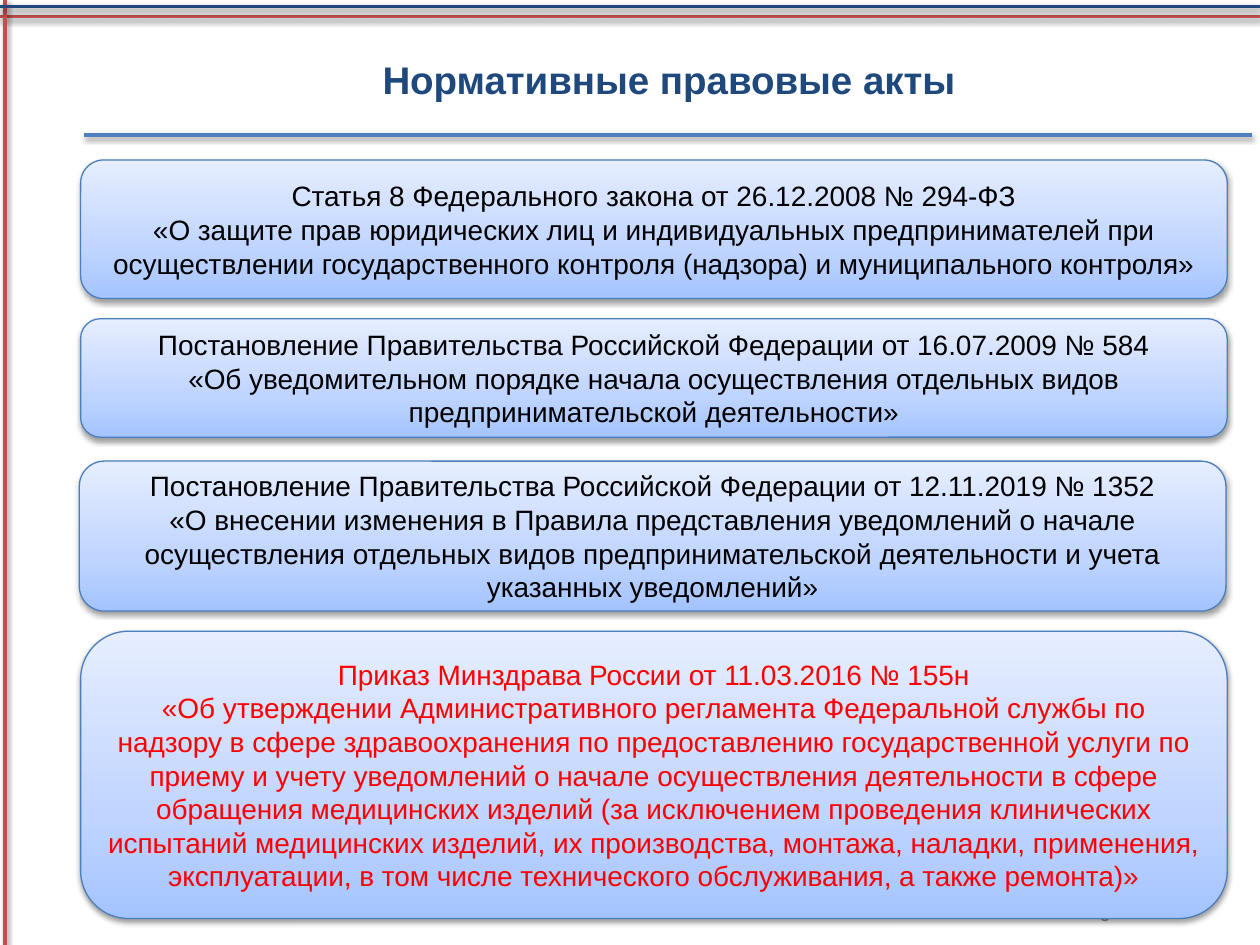
from copy import deepcopy
from dataclasses import dataclass

from lxml.etree import SubElement
from pptx import Presentation
from pptx.dml.color import RGBColor
from pptx.enum.shapes import MSO_CONNECTOR, MSO_SHAPE
from pptx.enum.text import MSO_ANCHOR, MSO_AUTO_SIZE, PP_ALIGN
from pptx.oxml.ns import qn
from pptx.util import Inches, Pt


@dataclass(frozen=True)
class Theme:
    face: str = "Arial"
    head: int = 22
    text: int = 16
    small: int = 12
    navy: str = "1F497D"
    red: str = "C0504D"
    blue: str = "4F81BD"
    edge: str = "4B7EBC"
    ink: str = "000000"
    alert: str = "FF0000"
    grey: str = "8C8C8C"
    fade: tuple = ((0, "A4C4FF"), (0.35, "BFD4FF"), (1, "E6EEFF"))


THEME = Theme()

ACTS = [
    (0.64, 1.27, 1.1, THEME.ink,
     "Статья 8 Федерального закона от 26.12.2008 № 294-ФЗ",
     "«О защите прав юридических лиц и индивидуальных предпринимателей при "
     "осуществлении государственного контроля (надзора) и муниципального контроля»"),
    (0.64, 2.53, 0.94, THEME.ink,
     "Постановление Правительства Российской Федерации от 16.07.2009 № 584",
     "«Об уведомительном порядке начала осуществления отдельных видов "
     "предпринимательской деятельности»"),
    (0.63, 3.66, 1.19, THEME.ink,
     "Постановление Правительства Российской Федерации от 12.11.2019 № 1352",
     "«О внесении изменения в Правила представления уведомлений о начале "
     "осуществления отдельных видов предпринимательской деятельности и учета "
     "указанных уведомлений»"),
    (0.64, 5.01, 2.28, THEME.alert,
     "Приказ Минздрава России от 11.03.2016 № 155н",
     "«Об утверждении Административного регламента Федеральной службы по надзору "
     "в сфере здравоохранения по предоставлению государственной услуги по приему "
     "и учету уведомлений о начале осуществления деятельности в сфере обращения "
     "медицинских изделий (за исключением проведения клинических испытаний "
     "медицинских изделий, их производства, монтажа, наладки, применения, "
     "эксплуатации, в том числе технического обслуживания, а также ремонта)»"),
]


def apply(item, values):
    for name, value in values.items():
        setattr(item, name, value)


def place(shape, left, top, width, height):
    apply(shape, {"left": Inches(left), "top": Inches(top),
                  "width": Inches(width), "height": Inches(height)})


def write(shape, lines, size, color, face=THEME.face, bold=False,
          align=PP_ALIGN.CENTER):
    frame = shape.text_frame
    apply(frame, {"word_wrap": True, "auto_size": MSO_AUTO_SIZE.NONE,
                  "vertical_anchor": MSO_ANCHOR.MIDDLE})
    frame.text = "\n".join(lines)
    for para in frame.paragraphs:
        para.alignment = align
        for run in para.runs:
            apply(run.font, {"name": face, "size": Pt(size), "bold": bold})
            run.font.color.rgb = RGBColor.from_string(color)


def shade(shape):
    effect = SubElement(shape._element.spPr, qn("a:effectLst"))
    cast = SubElement(effect, qn("a:outerShdw"), blurRad="40000", dist="20000",
                      dir="5400000", rotWithShape="0")
    tint = SubElement(cast, qn("a:srgbClr"), val=THEME.ink)
    SubElement(tint, qn("a:alpha"), val="38000")


def stroke(shape, color, width):
    shape.line.color.rgb = RGBColor.from_string(color)
    shape.line.width = Pt(width)


def add_rule(slide, start, end, color):
    ends = [Inches(value) for value in (*start, *end)]
    rule = slide.shapes.add_connector(MSO_CONNECTOR.STRAIGHT, *ends)
    stroke(rule, color, 2)
    shade(rule)


def fade(shape):
    fill = shape.fill
    fill.gradient()
    fill.gradient_angle = 90
    stops = shape._element.spPr.find(".//" + qn("a:gsLst"))
    stops.insert(1, deepcopy(stops[0]))
    for stop, (place_at, color) in zip(fill.gradient_stops, THEME.fade):
        stop.position = place_at
        stop.color.rgb = RGBColor.from_string(color)


def add_act(slide, left, top, height, color, *lines):
    card = slide.shapes.add_shape(
        MSO_SHAPE.ROUNDED_RECTANGLE, Inches(left), Inches(top),
        Inches(9.1), Inches(height))
    fade(card)
    stroke(card, THEME.edge, 0.75)
    shade(card)
    write(card, lines, THEME.text, color)


def add_title(slide, text):
    title = slide.shapes.title
    place(title, 0.62, 0.16, 9.38, 0.94)
    write(title, [text], THEME.head, THEME.navy, bold=True)


def add_page(slide, text):
    page = slide.shapes.add_textbox(
        Inches(6.58), Inches(7.05), Inches(2.33), Inches(0.4))
    write(page, [text], THEME.small, THEME.grey, "Calibri",
          align=PP_ALIGN.RIGHT)


def main():
    deck = Presentation()
    apply(deck, {"slide_width": Inches(10), "slide_height": Inches(7.5)})
    slide = deck.slides.add_slide(deck.slide_layouts[5])
    add_rule(slide, (10, 0.13), (0, 0.13), THEME.red)
    add_rule(slide, (0.04, 0), (0.04, 7.5), THEME.red)
    add_rule(slide, (0, 0.05), (10, 0.05), THEME.navy)
    add_page(slide, "6")
    add_title(slide, "Нормативные правовые акты")
    add_rule(slide, (0.67, 1.07), (9.94, 1.07), THEME.blue)
    for act in ACTS:
        add_act(slide, *act)
    deck.save("out.pptx")


if __name__ == "__main__":
    main()
